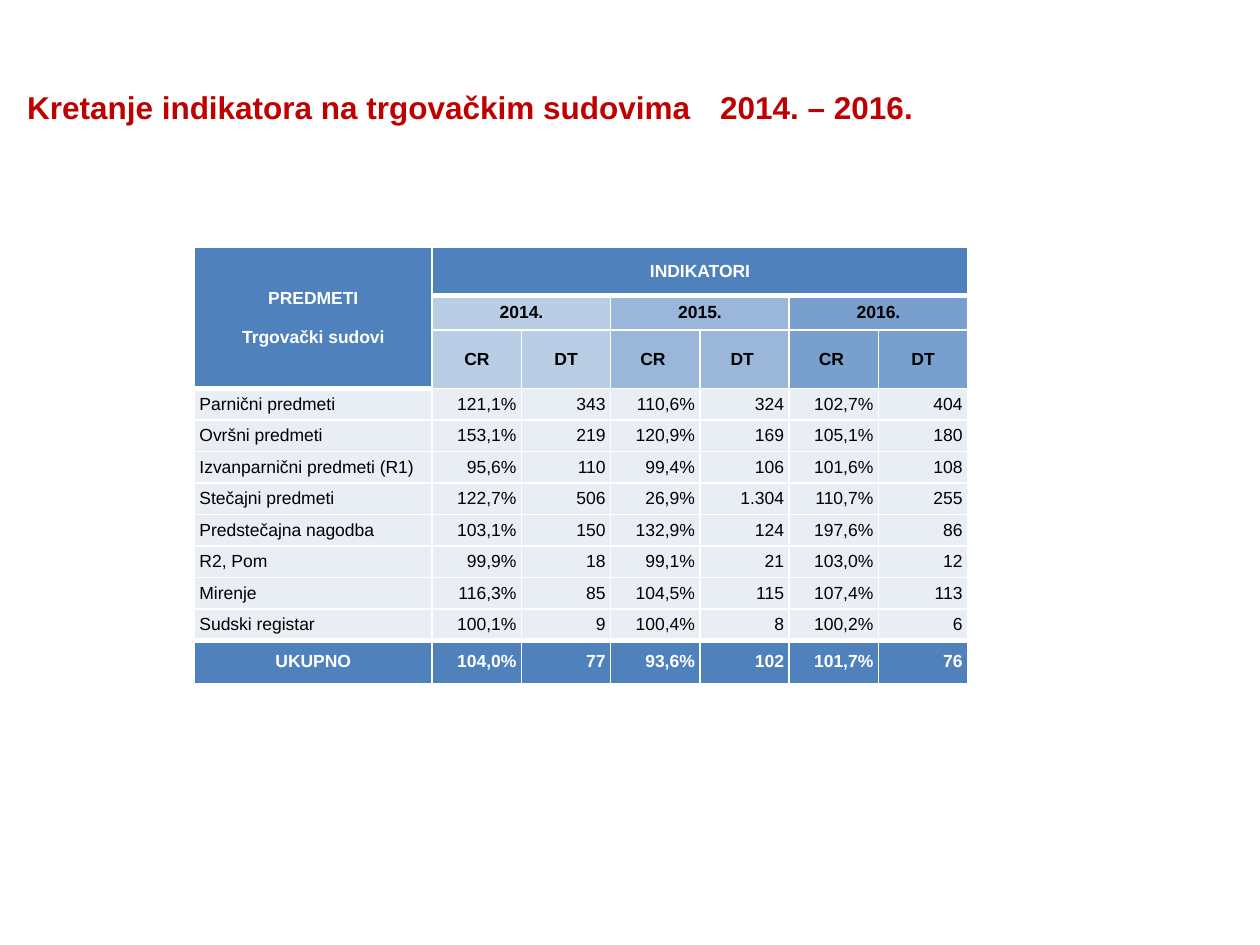
import pptx
import pptx.dml.color
import pptx.enum.text
import pptx.oxml
import pptx.oxml.ns
import pptx.util

Pt = pptx.util.Pt
RGB = pptx.dml.color.RGBColor.from_string
ALIGN = pptx.enum.text.PP_ALIGN
MIDDLE = pptx.enum.text.MSO_ANCHOR.MIDDLE

THEME = {
    "font": "Arial", "title_size": 18, "table_size": 10,
    "title": "C00000", "dark": "4F81BD", "light": "E9EDF4",
    "years": ["B9CDE5", "9AB7DA", "789FCE"],
    "white": "FFFFFF", "black": "000000",
}

ROWS = [
    ["PREDMETI\nTrgovački sudovi", "INDIKATORI", "", "", "", "", ""],
    ["", "2014.", "", "2015.", "", "2016.", ""],
    ["", "CR", "DT", "CR ", "DT ", "CR ", "DT"],
    ["Parnični predmeti", "121,1%", "343", "110,6%", "324", "102,7%", "404"],
    ["Ovršni predmeti", "153,1%", "219", "120,9%", "169", "105,1%", "180"],
    ["Izvanparnični predmeti (R1)", "95,6%", "110", "99,4%", "106", "101,6%", "108"],
    ["Stečajni predmeti", "122,7%", "506", "26,9%", "1.304", "110,7%", "255"],
    ["Predstečajna nagodba", "103,1%", "150", "132,9%", "124", "197,6%", "86"],
    ["R2, Pom", "99,9%", "18", "99,1%", "21", "103,0%", "12"],
    ["Mirenje", "116,3%", "85", "104,5%", "115", "107,4%", "113"],
    ["Sudski registar", "100,1%", "9", "100,4%", "8", "100,2%", "6"],
    ["UKUPNO", "104,0%", "77", "93,6%", "102", "101,7%", "76"],
]
HEADER_ROWS = 3
TOTAL = len(ROWS) - 1
ROW_HEIGHTS = [27.5, 19.5, 33.5] + [18] * (TOTAL - HEADER_ROWS) + [24.5]
COL_WIDTHS = [136] + [51] * 6


def style_text(paragraph, size, color, bold):
    for run in paragraph.runs:
        run.font.name = THEME["font"]
        run.font.size = Pt(size)
        run.font.bold = bold
        run.font.color.rgb = RGB(color)


def add_border(cell, side, width):
    line = pptx.oxml.parse_xml(
        f'<a:{side} {pptx.oxml.ns.nsdecls("a")} w="{Pt(width)}"><a:solidFill>'
        f'<a:srgbClr val="{THEME["white"]}"/></a:solidFill></a:{side}>')
    cell._tc.get_or_add_tcPr().append(line)


presentation = pptx.Presentation()
presentation.slide_width = Pt(720)
presentation.slide_height = Pt(540)
slide = presentation.slides.add_slide(presentation.slide_layouts[5])

# Title
title = slide.shapes.title
title.left, title.top, title.width, title.height = Pt(0), Pt(43), Pt(720), Pt(36)
title_text = title.text_frame
title_text.text = "Kretanje indikatora na trgovačkim sudovima\t2014. – 2016."
title_text.word_wrap = True
title_text.auto_size = pptx.enum.text.MSO_AUTO_SIZE.NONE
title_text.vertical_anchor = MIDDLE
title_text.margin_left = Pt(15.5)
title_text.paragraphs[0].alignment = ALIGN.LEFT
style_text(title_text.paragraphs[0], THEME["title_size"], THEME["title"], True)

# Table grid
indicators = slide.shapes.add_table(
    len(ROWS), len(COL_WIDTHS), Pt(111), Pt(141.5),
    Pt(sum(COL_WIDTHS)), Pt(sum(ROW_HEIGHTS))).table
indicators.first_row = False
indicators.horz_banding = False
for column, width in zip(indicators.columns, COL_WIDTHS):
    column.width = Pt(width)
for row, height in zip(indicators.rows, ROW_HEIGHTS):
    row.height = Pt(height)

# Merged headings
indicators.cell(0, 0).merge(indicators.cell(2, 0))
indicators.cell(0, 1).merge(indicators.cell(0, 6))
for c in (1, 3, 5):
    indicators.cell(1, c).merge(indicators.cell(1, c + 1))

# Cell text, borders and fills
for r, values in enumerate(ROWS):
    for c, value in enumerate(values):
        cell = indicators.cell(r, c)
        is_header = r < HEADER_ROWS
        is_dark = r in (0, TOTAL) or (is_header and c == 0)
        centred = is_header or (r == TOTAL and c == 0)

        cell.vertical_anchor = MIDDLE
        cell.margin_top = cell.margin_bottom = Pt(0)
        cell.margin_left = Pt(3 if c == 0 and not centred else 0)
        cell.margin_right = Pt(3 if c > 0 and not centred else 0)
        if value:
            cell.text_frame.text = value
        for paragraph in cell.text_frame.paragraphs:
            paragraph.alignment = (
                ALIGN.CENTER if centred else ALIGN.RIGHT if c else ALIGN.LEFT)
            style_text(paragraph, THEME["table_size"],
                       THEME["white" if is_dark else "black"],
                       is_header or r == TOTAL)

        # Thick rules close the dark headings and open the total row
        heading_end = HEADER_ROWS if c == 0 else 1
        thick_top = r in (heading_end, TOTAL)
        thick_bottom = r + 1 in (heading_end, TOTAL) or r == 0
        add_border(cell, "lnL", 1)
        add_border(cell, "lnR", 1)
        add_border(cell, "lnT", 3 if thick_top else 1)
        add_border(cell, "lnB", 3 if thick_bottom else 1)

        if is_dark:
            fill_color = THEME["dark"]
        elif is_header:
            fill_color = THEME["years"][(c - 1) // 2]
        else:
            fill_color = THEME["light"]
        cell.fill.solid()
        cell.fill.fore_color.rgb = RGB(fill_color)

indicators.cell(0, 0).text_frame.paragraphs[1].space_before = Pt(11)

presentation.save("out.pptx")
